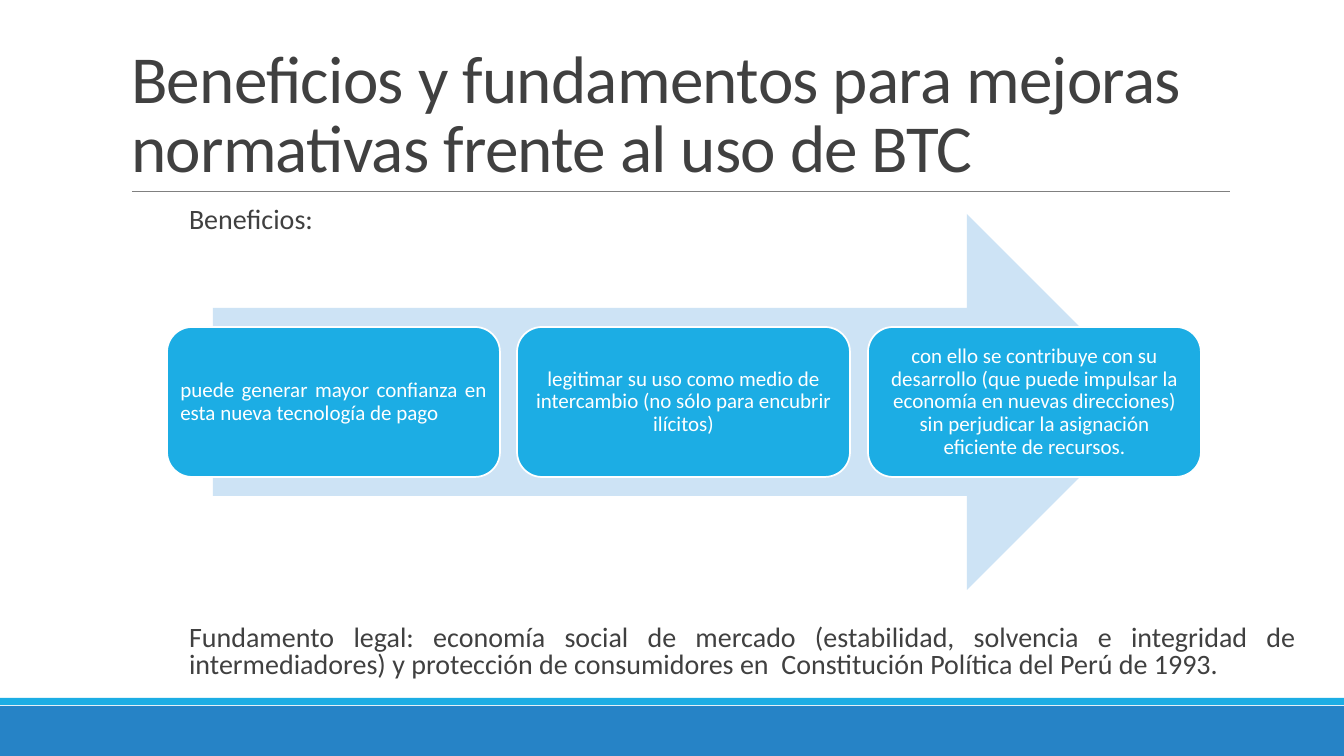
"""Build the slide on benefits and legal grounds for better BTC rules."""
import pptx
import pptx.util
import pptx.dml.color
import pptx.enum.shapes
import pptx.enum.text
import pptx.oxml

PX = 12192000 / 1344
COLORS = {"text": "404040", "blue": "2683C6", "cyan": "1CADE4",
          "arrow": "CDE3F5", "rule": "808080", "white": "FFFFFF"}
SHAPE = pptx.enum.shapes.MSO_SHAPE
ALIGN = pptx.enum.text.PP_ALIGN
ANCHOR = pptx.enum.text.MSO_ANCHOR
Pt = pptx.util.Pt


def px(*values):
    """Turn pixel lengths into EMU."""
    return [pptx.util.Emu(round(v * PX)) for v in values]


def style(p, size, color, spacing, align):
    """Format a paragraph and its runs."""
    p.line_spacing = spacing
    p.alignment = align
    for r in p.runs:
        r.font.name = "Calibri"
        r.font.size = Pt(size)
        r.font.color.rgb = pptx.dml.color.RGBColor.from_string(COLORS[color])


prs = pptx.Presentation()
prs.slide_width, prs.slide_height = px(1344, 756)
s = prs.slides.add_slide(prs.slide_layouts[5])

title = s.shapes.title
title.left, title.top, title.width, title.height = px(121, 31, 1109, 160)
tf = title.text_frame
tf.text = "Beneficios y fundamentos para mejoras normativas frente al uso de BTC"
tf.word_wrap = True
tf.auto_size = pptx.enum.text.MSO_AUTO_SIZE.NONE
tf.vertical_anchor = ANCHOR.BOTTOM
style(tf.paragraphs[0], 48, "text", 0.85, ALIGN.LEFT)
tf.paragraphs[0].runs[0].font._element.set("spc", "-50")

x1, y1, x2, y2 = px(132, 191, 1230, 191)
rule = s.shapes.add_connector(pptx.enum.shapes.MSO_CONNECTOR.STRAIGHT, x1, y1, x2, y2)
rule.line.width = Pt(0.5)
rule.line.color.rgb = pptx.dml.color.RGBColor.from_string(COLORS["rule"])
rule._element.spPr.append(pptx.oxml.parse_xml(
    '<a:effectLst xmlns:a="http://schemas.openxmlformats.org/drawingml/2006/main"/>'))

for kind, color, box in [
    (SHAPE.RECTANGLE, "blue", (0, 706, 1344, 50)),
    (SHAPE.RECTANGLE, "cyan", (0, 698, 1344, 7)),
    (SHAPE.RIGHT_ARROW, "arrow", (213, 214, 942, 376)),
]:
    sp = s.shapes.add_shape(kind, *px(*box))
    sp.shadow.inherit = False
    sp.fill.solid()
    sp.fill.fore_color.rgb = pptx.dml.color.RGBColor.from_string(COLORS[color])
    sp.line.fill.background()

benefits = [
    ("puede generar mayor confianza en esta nueva tecnología de pago", ALIGN.JUSTIFY),
    ("legitimar su uso como medio de intercambio (no sólo para encubrir ilícitos)",
     ALIGN.CENTER),
    ("con ello se contribuye con su desarrollo (que puede impulsar la economía en "
     "nuevas direcciones) sin perjudicar la asignación eficiente de recursos.",
     ALIGN.CENTER),
]
for i, (text, align) in enumerate(benefits):
    sp = s.shapes.add_shape(SHAPE.ROUNDED_RECTANGLE,
                            *px(167 + 701 * i // 2, 327, 333, 150))
    sp.shadow.inherit = False
    sp.fill.solid()
    sp.fill.fore_color.rgb = pptx.dml.color.RGBColor.from_string(COLORS["cyan"])
    sp.line.color.rgb = pptx.dml.color.RGBColor.from_string(COLORS["white"])
    sp.line.width = Pt(1.25)
    tf = sp.text_frame
    tf.text = text
    tf.word_wrap = True
    tf.vertical_anchor = ANCHOR.MIDDLE
    tf.margin_left, tf.margin_top, tf.margin_right, tf.margin_bottom = px(6, 6, 6, 6)
    style(tf.paragraphs[0], 15, "white", 0.9, align)

for text, box in [
    ("Beneficios:", (189, 203, 700, 40)),
    ("Fundamento legal: economía social de mercado (estabilidad, solvencia e "
     "integridad de intermediadores) y protección de consumidores en  "
     "Constitución Política del Perú de 1993.", (189, 621, 1107, 70)),
]:
    tf = s.shapes.add_textbox(*px(*box)).text_frame
    tf.word_wrap = True
    tf.margin_left = tf.margin_right = 0
    tf.text = text
    style(tf.paragraphs[0], 20, "text", 0.8, ALIGN.JUSTIFY)

prs.save("out.pptx")
